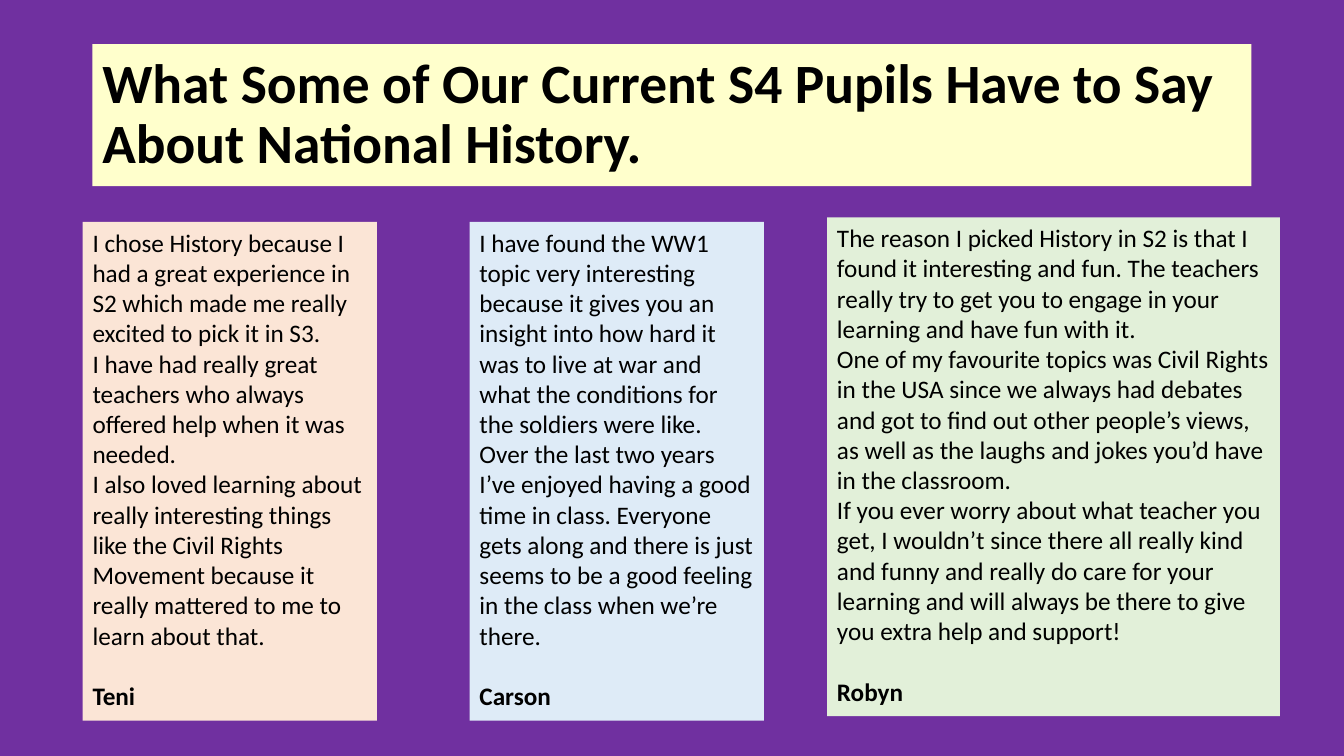
from pptx import Presentation
from pptx.dml.color import RGBColor
from pptx.enum.text import MSO_ANCHOR
from pptx.util import Pt

PURPLE = RGBColor(0x70, 0x30, 0xA0)
CREAM = RGBColor(0xFF, 0xFF, 0xCC)
PEACH = RGBColor(0xFB, 0xE5, 0xD6)
BLUE = RGBColor(0xDE, 0xEB, 0xF7)
GREEN = RGBColor(0xE2, 0xF0, 0xD9)
BLACK = RGBColor(0, 0, 0)


def add_panel(page, left, top, width, height, fill, anchor=MSO_ANCHOR.TOP):
    """Add a filled text box and return its text frame."""
    box = page.shapes.add_textbox(Pt(left), Pt(top), Pt(width), Pt(height))
    box.fill.solid()
    box.fill.fore_color.rgb = fill
    frame = box.text_frame
    frame.word_wrap = True
    frame.vertical_anchor = anchor
    return frame


def write(para, text, size=18, bold=False, before=0, spacing=1.0):
    para.space_before = Pt(before)
    para.line_spacing = spacing
    span = para.add_run()
    span.text = text
    span.font.name = "Calibri"
    span.font.size = Pt(size)
    span.font.bold = bold
    span.font.color.rgb = BLACK


deck = Presentation()
deck.slide_width, deck.slide_height = Pt(960), Pt(540)
page = deck.slides.add_slide(deck.slide_layouts[6])
page.background.fill.solid()
page.background.fill.fore_color.rgb = PURPLE

title = add_panel(page, 66, 31.6, 828, 101.4, CREAM, MSO_ANCHOR.MIDDLE)
write(title.paragraphs[0],
      "What Some of Our Current S4 Pupils Have to Say About National History.",
      size=39.6, bold=True, spacing=0.9)

# left, top, width, fill, pupil, paragraphs
quotes = [
    (59, 158.5, 210.3, PEACH, "Teni", [
        "I chose History because I had a great experience in S2 which made me "
        "really excited to pick it in S3.",
        "I have had really great teachers who always offered help when it was "
        "needed.",
        "I also loved learning about really interesting things like the Civil "
        "Rights Movement because it really mattered to me to learn about that.",
    ]),
    (335.4, 158.5, 210.3, BLUE, "Carson", [
        "I have found the WW1 topic very interesting because it gives you an "
        "insight into how hard it was to live at war and what the conditions "
        "for the soldiers were like. Over the last two years I’ve enjoyed "
        "having a good time in class. Everyone gets along and there is just "
        "seems to be a good feeling in the class when we’re there.",
    ]),
    (590.8, 155.3, 323.5, GREEN, "Robyn", [
        "The reason I picked History in S2 is that I found it interesting and "
        "fun. The teachers really try to get you to engage in your learning "
        "and have fun with it.",
        "One of my favourite topics was Civil Rights in the USA since we "
        "always had debates and got to find out other people’s views, as well "
        "as the laughs and jokes you’d have in the classroom.",
        "If you ever worry about what teacher you get, I wouldn’t since there "
        "all really kind and funny and really do care for your learning and "
        "will always be there to give you extra help and support!",
    ]),
]
for left, top, width, fill, pupil, paragraphs in quotes:
    frame = add_panel(page, left, top, width, 356.3, fill)
    write(frame.paragraphs[0], paragraphs[0])
    for text in paragraphs[1:]:
        write(frame.add_paragraph(), text)
    write(frame.add_paragraph(), pupil, bold=True, before=21.6)

deck.save("out.pptx")
